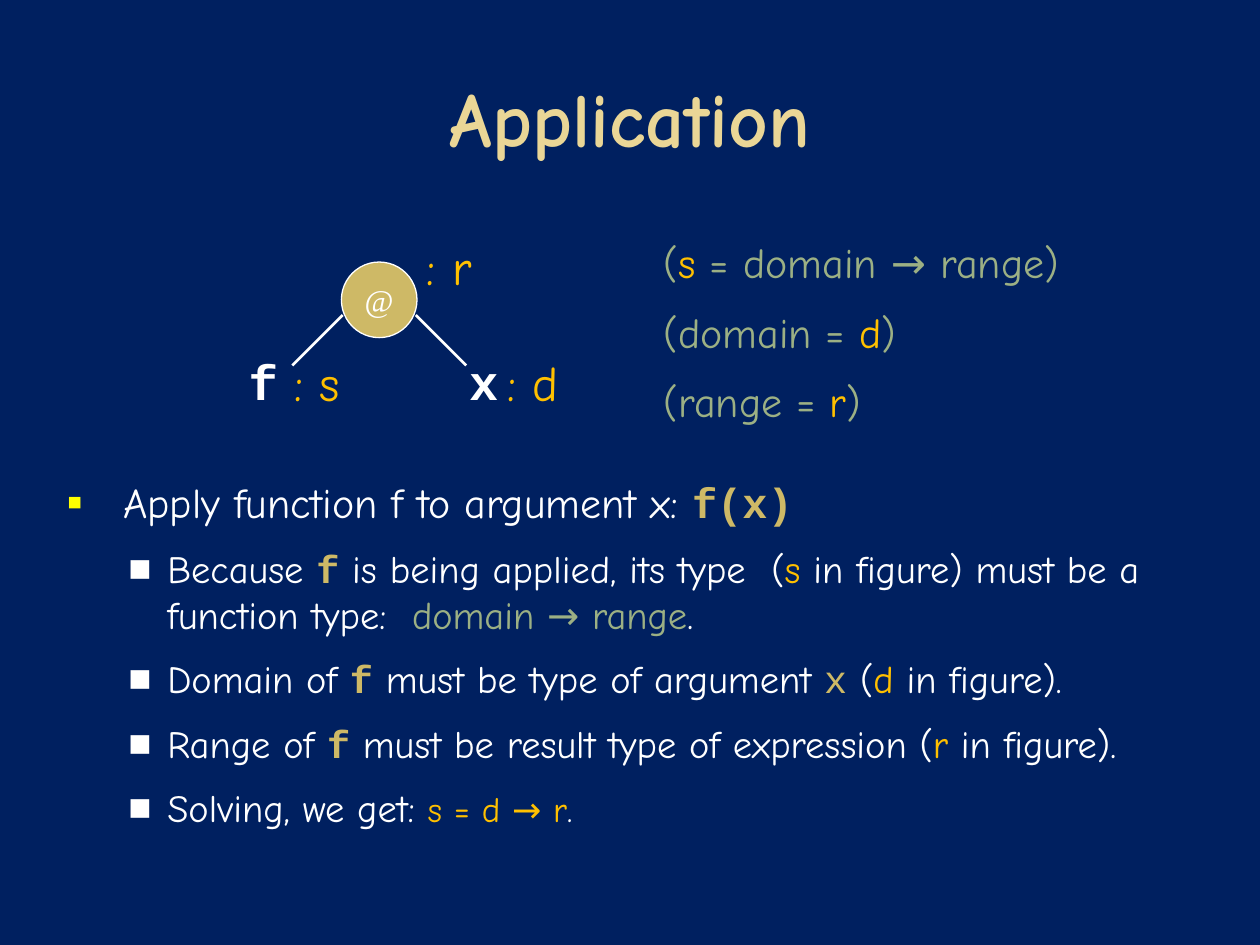
from lxml.etree import SubElement
from pptx import Presentation
from pptx.dml.color import RGBColor
from pptx.enum.shapes import MSO_CONNECTOR, MSO_SHAPE
from pptx.enum.text import MSO_ANCHOR, PP_ALIGN
from pptx.oxml.ns import qn
from pptx.util import Inches, Pt

NAVY, CREAM, WHITE, YELLOW = "002060", "EAD696", "FFFFFF", "FFFF00"
GOLD, AMBER, SAGE = "CEB966", "FFC000", "9CB084"
COMIC, MONO, SERIF = "Comic Neue", "Courier New", "Times New Roman"

# Role of a piece of text: font, colour, bold
ROLES = {
    "title": (COMIC, CREAM, True),
    "plain": (COMIC, WHITE, False),
    "type": (COMIC, AMBER, False),
    "rule": (COMIC, SAGE, False),
    "code": (MONO, GOLD, True),
    "argument": (MONO, GOLD, False),
    "leaf": (MONO, WHITE, True),
    "operator": (SERIF, WHITE, False),
}

CONSTRAINTS = [
    [("(", "rule"), ("s", "type"), (" = domain → range)", "rule")],
    [("(domain = ", "rule"), ("d", "type"), (")", "rule")],
    [("(range = ", "rule"), ("r", "type"), (")", "rule")],
]
HEADLINE = [("Apply function f to argument x: ", "plain"), ("f(x)", "code")]
DETAILS = [
    [("Because ", "plain"), ("f", "code"),
     (" is being applied, its type  (", "plain"), ("s ", "type"),
     ("in figure) must be a function type:  ", "plain"),
     ("domain → range", "rule"), (".", "plain")],
    [("Domain of ", "plain"), ("f", "code"),
     (" must be type of argument ", "plain"), ("x", "argument"),
     (" (", "plain"), ("d ", "type"), ("in figure).", "plain")],
    [("Range of ", "plain"), ("f", "code"),
     (" must be result type of expression (", "plain"), ("r ", "type"),
     ("in figure).", "plain")],
    [("Solving, we get: ", "plain"), ("s = d → r", "type", 20),
     (".", "plain", 20)],
]


def color(hex_value):
    return RGBColor.from_string(hex_value)


def write(paragraph, pieces, size):
    for text, role, *own_size in pieces:
        run = paragraph.add_run()
        run.text = text
        font = run.font
        font.name, tint, font.bold = ROLES[role]
        font.color.rgb = color(tint)
        font.size = Pt(own_size[0] if own_size else size)


def add_text(slide, box, pieces, size):
    frame = slide.shapes.add_textbox(*map(Inches, box)).text_frame
    frame.word_wrap = True
    write(frame.paragraphs[0], pieces, size)
    return frame


def set_bullet(paragraph, symbol, tint, margin, indent, percent=100):
    props = paragraph._p.get_or_add_pPr()
    props.set("marL", str(Inches(margin)))
    props.set("indent", str(Inches(indent)))
    bullet_color = SubElement(props, qn("a:buClr"))
    SubElement(bullet_color, qn("a:srgbClr"), val=tint)
    SubElement(props, qn("a:buSzPct"), val=str(percent * 1000))
    SubElement(props, qn("a:buFont"), typeface="Arial")
    SubElement(props, qn("a:buChar"), char=symbol)


def add_title(slide, box):
    frame = add_text(slide, box, [("Application", "title")], 44)
    frame.vertical_anchor = MSO_ANCHOR.MIDDLE
    frame.paragraphs[0].alignment = PP_ALIGN.CENTER


def add_node(slide, left, top, label, role, size, filled=False):
    node = slide.shapes.add_shape(
        MSO_SHAPE.OVAL, *map(Inches, (left, top, 0.6, 0.6)))
    node.shadow.inherit = False
    if filled:
        node.fill.solid()
        node.fill.fore_color.rgb = color(GOLD)
        node.line.color.rgb = color(WHITE)
        node.line.width = Pt(0.75)
    else:
        node.fill.background()
        node.line.fill.background()
    frame = node.text_frame
    frame.word_wrap = False
    frame.vertical_anchor = MSO_ANCHOR.MIDDLE
    frame.paragraphs[0].alignment = PP_ALIGN.CENTER
    write(frame.paragraphs[0], [(label, role)], size)


def add_branch(slide, x1, y1, x2, y2):
    branch = slide.shapes.add_connector(
        MSO_CONNECTOR.STRAIGHT, *map(Inches, (x1, y1, x2, y2)))
    branch.line.color.rgb = color(WHITE)
    branch.line.width = Pt(1.5)
    SubElement(branch._element.spPr, qn("a:effectLst"))


def add_tree(slide, left, top):
    """Application node with its function and argument below it."""
    root_center = left + 1.2
    add_node(slide, root_center - 0.3, top + 0.25, "@", "operator", 18, True)
    for side in (1, -1):
        add_branch(slide, root_center + side * 0.29, top + 0.67,
                   root_center + side * 0.69, top + 1.07)
    add_node(slide, left - 0.02, top + 0.89, "f", "leaf", 28)
    add_node(slide, left + 1.73, top + 0.89, "x", "leaf", 28)
    # Type annotations
    for label, dx, dy in ((": s", 0.43, 0.92), (": d", 2.12, 0.92),
                          (": r", 1.48, 0)):
        add_text(slide, (left + dx, top + dy, 1.08, 0.57),
                 [(label, "type")], 28)


def add_constraints(slide, left, top, width, pitch):
    for row, pieces in enumerate(CONSTRAINTS):
        add_text(slide, (left, top + row * pitch, width, 0.51), pieces, 24)


def add_explanation(slide, box):
    frame = add_text(slide, box, HEADLINE, 24)
    headline = frame.paragraphs[0]
    headline.space_after = Pt(6)
    set_bullet(headline, "▪", YELLOW, 0.6, -0.45, 110)
    for pieces in DETAILS:
        detail = frame.add_paragraph()
        detail.level = 1
        detail.space_before, detail.space_after = Pt(4.4), Pt(6)
        set_bullet(detail, "■", WHITE, 0.95, -0.31)
        write(detail, pieces, 22)


def main():
    prs = Presentation()
    prs.slide_width, prs.slide_height = Inches(10), Inches(7.5)
    slide = prs.slides.add_slide(prs.slide_layouts[6])
    slide.background.fill.solid()
    slide.background.fill.fore_color.rgb = color(NAVY)

    add_title(slide, (0.5, 0.3, 9, 1.25))
    add_explanation(slide, (0.28, 3.73, 9.5, 3.17))
    add_tree(slide, 1.81, 1.83)
    add_constraints(slide, 5.17, 1.83, 4.83, 0.55)
    prs.save("out.pptx")


if __name__ == "__main__":
    main()
